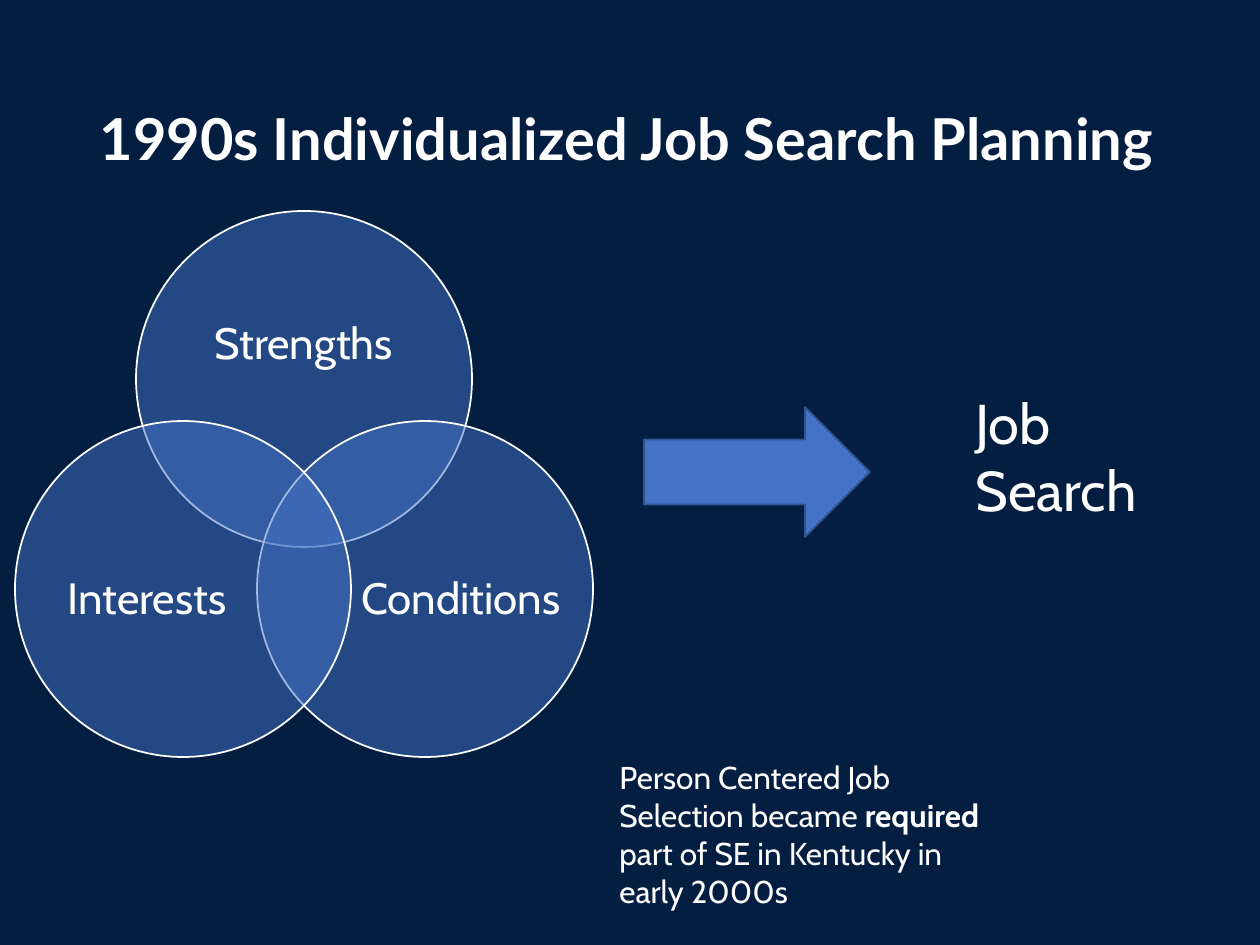
"""Build the individualized job search planning slide."""
from dataclasses import dataclass

from lxml import etree
from pptx import Presentation
from pptx import util as u
from pptx.dml.color import RGBColor
from pptx.enum import shapes, text
from pptx.oxml.ns import qn


@dataclass(frozen=True)
class Theme:
    navy: str = "041E42"
    blue: str = "4472C4"
    edge: str = "325491"
    white: str = "FFFFFF"
    head_font: str = "Lato"
    body_font: str = "Cabin"
    title: int = 33
    result: int = 32
    label: int = 25
    note: int = 18


THEME = Theme()


def px(*values):
    return [u.Emu(round(v * 914400 / 126)) for v in values]


def style(p, size, font=THEME.body_font, bold=False):
    for r in p.runs:
        r.font.size = u.Pt(size)
        r.font.name = font
        r.font.bold = bold
        r.font.color.rgb = RGBColor.from_string(THEME.white)


prs = Presentation()
prs.slide_width, prs.slide_height = px(1260, 945)
s = prs.slides.add_slide(prs.slide_layouts[5])
s.background.fill.solid()
s.background.fill.fore_color.rgb = RGBColor.from_string(THEME.navy)

title = s.shapes.title
title.left, title.top, title.width, title.height = px(87, 50, 1086, 183)
tf = title.text_frame
tf.text = "1990s Individualized Job Search Planning"
tf.auto_size = text.MSO_AUTO_SIZE.NONE
tf.vertical_anchor = text.MSO_ANCHOR.MIDDLE
p = tf.paragraphs[0]
p.alignment = text.PP_ALIGN.LEFT
p.line_spacing = 0.9
style(p, THEME.title, THEME.head_font, True)

venn = s.shapes.add_group_shape()
for name, circle, label in (
    ("Strengths", (136, 211), (180, 270, 247, 151)),
    ("Conditions", (257, 421), (360, 508, 202, 185)),
    ("Interests", (15, 421), (46, 508, 202, 185)),
):
    sp = venn.shapes.add_shape(shapes.MSO_SHAPE.OVAL, *px(*circle, 336, 336))
    sp.shadow.inherit = False
    sp.fill.solid()
    sp.fill.fore_color.rgb = RGBColor.from_string(THEME.blue)
    color = sp.fill._xPr.find(qn("a:solidFill"))[0]
    etree.SubElement(color, qn("a:alpha"), val="50000")
    sp.line.color.rgb = RGBColor.from_string(THEME.white)
    sp.line.width = u.Pt(1)

    tf = venn.shapes.add_textbox(*px(*label)).text_frame
    tf.word_wrap = True
    tf.margin_left = tf.margin_right = tf.margin_top = tf.margin_bottom = 0
    tf.vertical_anchor = text.MSO_ANCHOR.MIDDLE
    tf.text = name
    p = tf.paragraphs[0]
    p.alignment = text.PP_ALIGN.CENTER
    p.line_spacing = 0.9
    style(p, THEME.label)

arrow = s.shapes.add_shape(shapes.MSO_SHAPE.RIGHT_ARROW, *px(644, 407, 226, 130))
arrow.shadow.inherit = False
arrow.fill.solid()
arrow.fill.fore_color.rgb = RGBColor.from_string(THEME.blue)
arrow.line.color.rgb = RGBColor.from_string(THEME.edge)
arrow.line.width = u.Pt(1)

for box, size, parts in (
    ((963, 382, 236, 149), THEME.result, ("Job Search",)),
    ((607, 752, 396, 165), THEME.note, (
        "Person Centered Job Selection became ",
        "required ",
        "part of SE in Kentucky in early 2000s",
    )),
):
    tf = s.shapes.add_textbox(*px(*box)).text_frame
    tf.word_wrap = True
    tf.auto_size = text.MSO_AUTO_SIZE.SHAPE_TO_FIT_TEXT
    p = tf.paragraphs[0]
    for part in parts:
        p.add_run().text = part
    style(p, size)
    for r in p.runs[1:2]:
        r.font.bold = True

prs.save("out.pptx")
